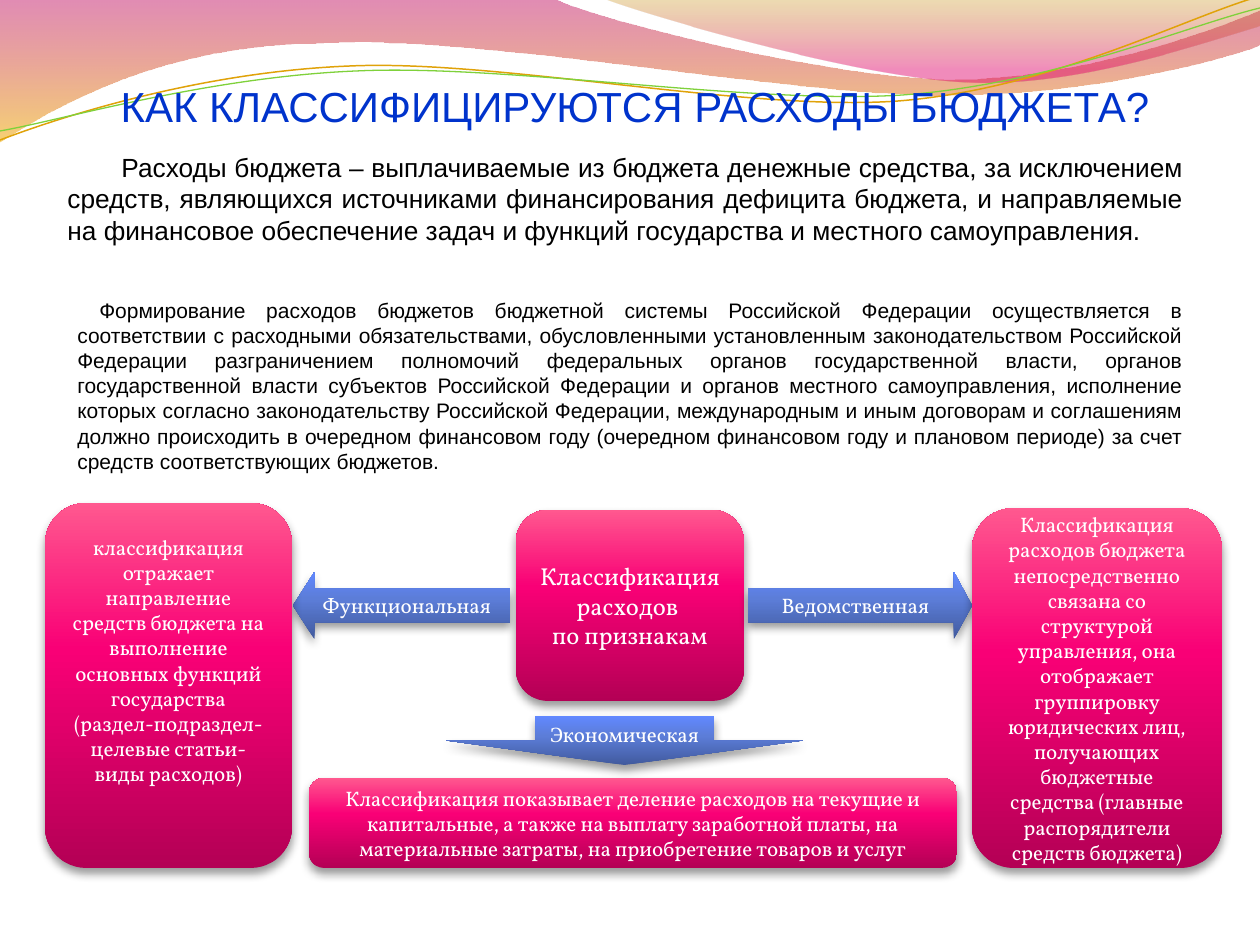
from dataclasses import dataclass

import pptx
import pptx.dml.color
import pptx.enum.shapes
import pptx.enum.text
import pptx.oxml
import pptx.oxml.ns
import pptx.util

EMU_PER_PX = 914400 / 126
COLORS = {
    "title": "0033CC", "text": "000000", "label": "FFFFFF", "shadow": "000000",
    "gold_line": "E0A209", "green_line": "7FD13B",
}
# Gradient stops: position %, colour, opacity %
PINK = [(0, "B40055", 100), (60, "F90076", 100), (100, "FF588F", 100)]
BLUE = [(0, "415A9E", 100), (60, "5C7DD8", 100), (100, "6188FF", 100)]
LEFT_WAVE = [(0, "BD0059", 45), (100, "F0AB00", 55)]
RIGHT_WAVE = [(0, "C38B00", 30), (80, "E1006B", 45)]
SHAPES = pptx.enum.shapes.MSO_SHAPE
ALIGN = pptx.enum.text.PP_ALIGN
ANCHOR = pptx.enum.text.MSO_ANCHOR

Point = tuple[int, int]


@dataclass
class Wave:
    """Segments of one point are lines, segments of three points are Bézier curves."""
    start: Point
    segments: list[tuple[Point, ...]]
    stops: list | None = None
    line: str | None = None
    weight: float = 0


@dataclass
class Block:
    kind: int
    box: tuple[int, int, int, int]
    paragraphs: list[str]
    stops: list
    size: int = 12
    adjustments: tuple[float, ...] = ()
    bottom_inset: int = 6


WAVES = [
    Wave((0, -1), [((554, -1),), ((600, 21), (837, 79), (955, 79)),
                   ((1075, 79), (1207, 33), (1260, 11)), ((1261, 45),),
                   ((1239, 55), (1096, 96), (940, 95)),
                   ((784, 95), (481, 35), (324, 43)),
                   ((163, 44), (58, 105), (-1, 142))], stops=LEFT_WAVE),
    Wave((604, -1), [((641, 14), (859, 78), (969, 82)),
                     ((1079, 87), (1211, 40), (1260, 26)), ((1260, 0),)],
         stops=RIGHT_WAVE),
    Wave((0, 140), [((60, 117), (199, 72), (349, 66)),
                    ((498, 59), (747, 112), (898, 101)),
                    ((1050, 89), (1182, 19), (1257, -3))],
         line="gold_line", weight=0.85),
    Wave((0, 131), [((59, 121), (207, 77), (357, 71)),
                    ((508, 64), (752, 105), (903, 95)),
                    ((1053, 84), (1186, 26), (1260, 8))],
         line="green_line", weight=0.75),
]
CARD = SHAPES.FLOWCHART_ALTERNATE_PROCESS
BLOCKS = [
    Block(CARD, (516, 510, 228, 191),
          ["Классификация расходов ", "по признакам"], PINK, size=14),
    Block(SHAPES.LEFT_ARROW, (293, 572, 217, 67), ["Функциональная"], BLUE,
          adjustments=(0.5, 0.32)),
    Block(SHAPES.RIGHT_ARROW, (748, 572, 224, 67), ["Ведомственная"], BLUE,
          adjustments=(0.5, 0.27)),
    Block(CARD, (45, 503, 247, 365),
          ["классификация отражает направление средств бюджета на выполнение "
           "основных функций государства (раздел-подраздел-целевые статьи-виды "
           "расходов)"], PINK, bottom_inset=57),
    Block(CARD, (972, 508, 250, 360),
          ["Классификация расходов бюджета непосредственно связана со структурой "
           "управления, она отображает группировку юридических лиц, получающих "
           "бюджетные средства (главные распорядители средств бюджета)"], PINK),
    Block(SHAPES.DOWN_ARROW, (446, 716, 357, 49), ["Экономическая"], BLUE),
    Block(CARD, (309, 778, 648, 90),
          ["Классификация показывает деление расходов на текущие и капитальные, "
           "а также на выплату заработной платы, на материальные затраты, на "
           "приобретение товаров и услуг"], PINK),
]
DEFINITION = (
    "Расходы бюджета – выплачиваемые из бюджета денежные средства, за исключением "
    "средств, являющихся источниками финансирования дефицита бюджета, и направляемые "
    "на финансовое обеспечение задач и функций государства и местного самоуправления.")
FORMATION = (
    "Формирование расходов бюджетов бюджетной системы Российской Федерации "
    "осуществляется в соответствии с расходными обязательствами, обусловленными "
    "установленным законодательством Российской Федерации разграничением полномочий "
    "федеральных органов государственной власти, органов государственной власти "
    "субъектов Российской Федерации и органов местного самоуправления, исполнение "
    "которых согласно законодательству Российской Федерации, международным и иным "
    "договорам и соглашениям должно происходить в очередном финансовом году "
    "(очередном финансовом году и плановом периоде) за счет средств соответствующих "
    "бюджетов.")


def px(length: float) -> int:
    return round(length * EMU_PER_PX)


def rgb(hex_color: str):
    return pptx.dml.color.RGBColor.from_string(hex_color)


def add_node(parent, tag: str, **attributes):
    node = pptx.oxml.parse_xml(f"<{tag} {pptx.oxml.ns.nsdecls('a')}/>")
    for name, value in attributes.items():
        node.set(name, str(value))
    parent.append(node)
    return node


def add_color(parent, color: str, opacity: int) -> None:
    node = add_node(parent, "a:srgbClr", val=color)
    if opacity < 100:
        add_node(node, "a:alpha", val=opacity * 1000)


def fill_gradient(shape, stops: list, angle: int) -> None:
    shape.fill.gradient()
    gradient = shape.element.spPr.find(pptx.oxml.ns.qn("a:gradFill"))
    for child in list(gradient):
        gradient.remove(child)
    stop_list = add_node(gradient, "a:gsLst")
    for position, color, opacity in stops:
        add_color(add_node(stop_list, "a:gs", pos=position * 1000), color, opacity)
    add_node(gradient, "a:lin", ang=angle * 60000, scaled=0)


def cast_shadow(shape) -> None:
    shape.shadow.inherit = False
    effects = shape.element.spPr.find(pptx.oxml.ns.qn("a:effectLst"))
    shadow = add_node(effects, "a:outerShdw", blurRad=66040, dist=38100,
                      dir=90 * 60000, rotWithShape=0)
    add_color(shadow, COLORS["shadow"], 40)


def write(frame, paragraphs: list[str], font: str, size: int, color: str,
          alignment, indent: int = 0) -> None:
    frame.word_wrap = True
    for index, text in enumerate(paragraphs):
        paragraph = frame.add_paragraph() if index else frame.paragraphs[0]
        paragraph.text = text
        paragraph.alignment = alignment
        if indent:
            paragraph._p.get_or_add_pPr().set("indent", str(px(indent)))
        paragraph.font.name = font
        paragraph.font.size = pptx.util.Pt(size)
        paragraph.font.color.rgb = rgb(COLORS[color])


def bend_segments(shape, segments: list[tuple[Point, ...]]) -> None:
    """Turn each run of three straight segments into one Bézier curve."""
    line_tag = pptx.oxml.ns.qn("a:lnTo")
    lines = iter(list(shape.element.iter(line_tag)))
    for segment in segments:
        nodes = [next(lines) for _ in segment]
        if len(nodes) == 3:
            outline = nodes[0].getparent()
            curve = add_node(outline, "a:cubicBezTo")
            outline.replace(nodes[0], curve)
            for node in nodes:
                curve.append(node[0])
            for node in nodes[1:]:
                outline.remove(node)


def draw_wave(slide, wave: Wave) -> None:
    points = [wave.start, *(point for segment in wave.segments for point in segment)]
    points = [(px(x), px(y)) for x, y in points]
    builder = slide.shapes.build_freeform(*points[0], scale=1.0)
    builder.add_line_segments(points[1:], close=wave.line is None)
    shape = builder.convert_to_shape()
    bend_segments(shape, wave.segments)
    shape.shadow.inherit = False
    if wave.line:
        shape.fill.background()
        shape.line.color.rgb = rgb(COLORS[wave.line])
        shape.line.width = pptx.util.Pt(wave.weight)
    else:
        fill_gradient(shape, wave.stops, 90)
        shape.line.fill.background()


def draw_block(slide, block: Block) -> None:
    shape = slide.shapes.add_shape(block.kind, *map(px, block.box))
    for index, value in enumerate(block.adjustments):
        shape.adjustments[index] = value
    fill_gradient(shape, block.stops, 270)
    shape.line.fill.background()
    cast_shadow(shape)
    shape.text_frame.vertical_anchor = ANCHOR.MIDDLE
    shape.text_frame.margin_bottom = px(block.bottom_inset)
    write(shape.text_frame, block.paragraphs, "Vollkorn", block.size, "label", ALIGN.CENTER)


def main() -> None:
    presentation = pptx.Presentation()
    presentation.slide_width, presentation.slide_height = px(1260), px(945)
    slide = presentation.slides.add_slide(presentation.slide_layouts[5])
    for wave in WAVES:
        draw_wave(slide, wave)

    title = slide.shapes.title
    slide.shapes.element.append(title.element)  # in front of the waves
    title.left, title.top, title.width, title.height = map(px, (55, 74, 1160, 63))
    title.text_frame.vertical_anchor = ANCHOR.MIDDLE
    write(title.text_frame, ["КАК КЛАССИФИЦИРУЮТСЯ РАСХОДЫ БЮДЖЕТА?"],
          "Arial", 24, "title", ALIGN.CENTER)

    for box, text, size, indent in (((55, 145, 1141, 139), DEFINITION, 15, 54),
                                    ((65, 291, 1131, 220), FORMATION, 12, 22)):
        textbox = slide.shapes.add_textbox(*map(px, box))
        write(textbox.text_frame, [text], "Arial", size, "text", ALIGN.JUSTIFY, indent)

    for block in BLOCKS:
        draw_block(slide, block)
    presentation.save("out.pptx")


if __name__ == "__main__":
    main()
